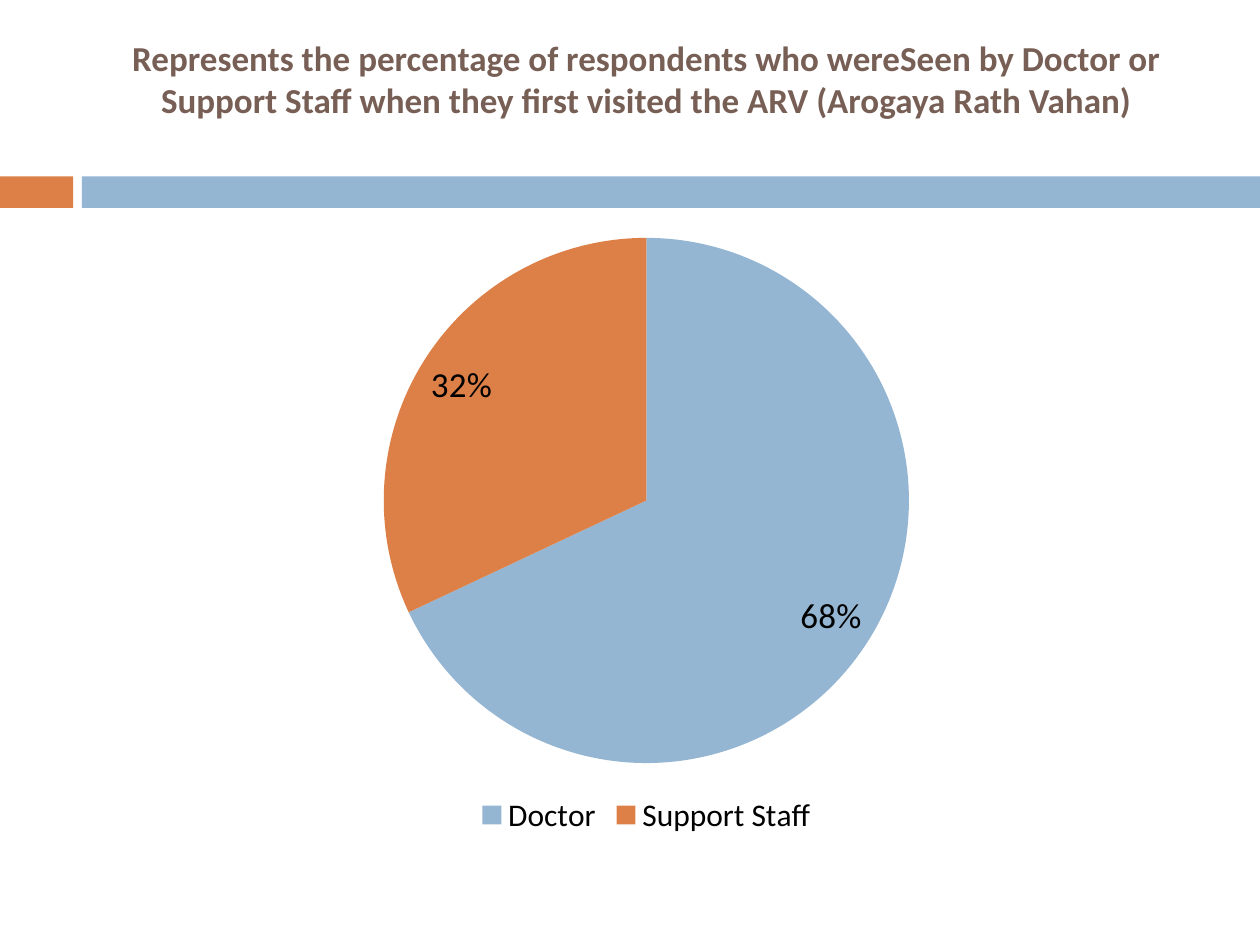
from pptx import Presentation
from pptx import util as u
from pptx.chart.data import CategoryChartData
from pptx.dml.color import RGBColor
from pptx.enum import chart as ch, shapes, text

Inches, Pt = u.Inches, u.Pt
FONT = "Calibri"
COLORS = {"blue": "94B6D2", "orange": "DD8047", "brown": "775F55", "black": "000000"}


def rgb(name):
    return RGBColor.from_string(COLORS[name])


def set_font(font, size, color, bold=False):
    font.name = FONT
    font.size = Pt(size)
    font.bold = bold
    font.color.rgb = rgb(color)


def add_band(s, x, y, w, h):
    accent, gap = 0.58, 0.07
    start = accent + gap
    for left, width, color in ((x, accent, "orange"), (x + start, w - start, "blue")):
        sp = s.shapes.add_shape(
            shapes.MSO_SHAPE.RECTANGLE, Inches(left), Inches(y), Inches(width), Inches(h)
        )
        sp.shadow.inherit = False
        sp.fill.solid()
        sp.fill.fore_color.rgb = rgb(color)
        sp.line.fill.background()


def set_title(s, x, y, w, h):
    title = s.shapes.title
    title.left, title.top, title.width, title.height = map(Inches, (x, y, w, h))
    tf = title.text_frame
    tf.word_wrap = True
    tf.auto_size = text.MSO_AUTO_SIZE.NONE
    tf.vertical_anchor = text.MSO_ANCHOR.MIDDLE
    tf.margin_bottom = Inches(0.38)
    p = tf.paragraphs[0]
    p.text = (
        "Represents the percentage of respondents who wereSeen by Doctor or "
        "Support Staff when they first visited the ARV (Arogaya Rath Vahan)"
    )
    p.alignment = text.PP_ALIGN.CENTER
    p.line_spacing = 1.0
    p.space_before = Pt(0)
    set_font(p.font, 20, "brown", bold=True)


def add_pie(s, x, y, w, h):
    data = CategoryChartData(number_format="0")
    data.categories = ["Doctor", "Support Staff"]
    data.add_series("Series 1", (68, 32))
    chart = s.shapes.add_chart(
        ch.XL_CHART_TYPE.PIE, Inches(x), Inches(y), Inches(w), Inches(h), data
    ).chart
    set_font(chart.font, 10, "black")
    chart.has_title = False

    chart.has_legend = True
    chart.legend.position = ch.XL_LEGEND_POSITION.BOTTOM
    chart.legend.include_in_layout = False
    set_font(chart.legend.font, 18, "black")

    plot = chart.plots[0]
    plot.vary_by_categories = True
    for i, color in enumerate(("blue", "orange")):
        fill = plot.series[0].points[i].format.fill
        fill.solid()
        fill.fore_color.rgb = rgb(color)

    plot.has_data_labels = True
    labels = plot.data_labels
    labels.show_percentage = True
    labels.show_value = False
    labels.number_format = "0%"
    labels.number_format_is_linked = False
    labels.position = ch.XL_LABEL_POSITION.INSIDE_END
    set_font(labels.font, 20, "black")


def main():
    prs = Presentation()
    prs.slide_width, prs.slide_height = Inches(10), Inches(7.5)
    s = prs.slides.add_slide(prs.slide_layouts[5])
    add_band(s, 0, 1.4, 10, 0.25)
    set_title(s, 0.67, 0.25, 8.92, 1.08)
    add_pie(s, 0.67, 1.75, 8.92, 4.92)
    prs.save("out.pptx")


if __name__ == "__main__":
    main()
